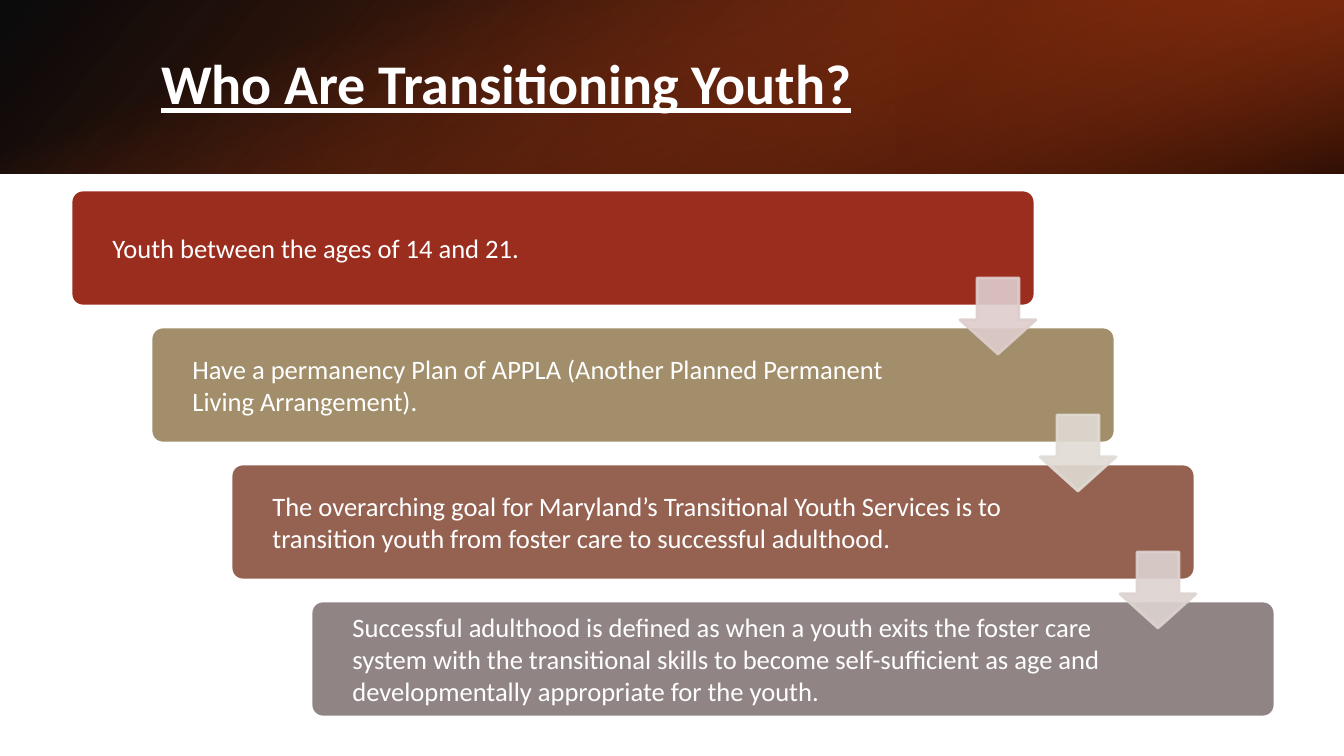
from lxml import etree
from pptx import Presentation
from pptx.dml.color import RGBColor
from pptx.enum.shapes import MSO_SHAPE as Preset
from pptx.enum.text import MSO_ANCHOR as Anchor, PP_ALIGN as Align
from pptx.oxml.ns import qn
from pptx.util import Pt

PX = 914400 / 100.8
PAGE_SIZE = 1344, 756

TITLE = "Who Are Transitioning Youth?"
TITLE_BOX = 151, 38, 1107, 97

BANNER = [
    {"box": (0, 0, 1344, 174), "rotation": 0, "flip": True, "angle": 140,
     "stops": [(0, "000000", 96), (100, "9E3611", 100)]},
    {"box": (896, 0, 448, 174), "rotation": 180, "flip": True, "angle": 320,
     "stops": [(19, "69240C", 68), (100, "D34817", 79)]},
    {"box": (585, -585, 174, 1344), "rotation": 90, "flip": False, "angle": 340,
     "stops": [(23, "D34817", 0), (99, "000000", 74)]},
]

STEPS = [
    ("Youth between the ages of 14 and 21.", "9B2D1F"),
    ("Have a permanency Plan of APPLA (Another Planned Permanent Living Arrangement).", "A28E6A"),
    ("The overarching goal for Maryland’s Transitional Youth Services is to transition "
     "youth from foster care to successful adulthood.", "956251"),
    ("Successful adulthood is defined as when a youth exits the foster care system with "
     "the transitional skills to become self-sufficient as age and developmentally "
     "appropriate for the youth.", "918485"),
]
ARROW_COLORS = ["DECDCD", "E0DBD4", "DDD3D0"]

STEP_X, STEP_Y = 80, 137
CARD = 71, 190, 964, 116
ARROW = 960, 278, 76, 76


def px(value):
    return round(value * PX)


def color(value):
    return RGBColor.from_string(value)


def stepped(box, index):
    left, top, width, height = box
    return left + STEP_X * index, top + STEP_Y * index, width, height


def add_preset(page, preset, box, adjustments=()):
    shape = page.shapes.add_shape(preset, *map(px, box))
    shape.shadow.inherit = False
    for index, value in enumerate(adjustments):
        shape.adjustments[index] = value
    return shape


def paint(shape, fill, line):
    shape.fill.solid()
    shape.fill.fore_color.rgb = color(fill)
    shape.line.color.rgb = color(line)
    shape.line.width = Pt(2)


def set_alpha(color_element, percent):
    etree.SubElement(color_element, qn("a:alpha"), val=str(percent * 1000))


def write(frame, text, size, bold=False, underline=False, spacing=1.0, margins=None):
    frame.word_wrap = True
    frame.vertical_anchor = Anchor.MIDDLE
    if margins:
        (frame.margin_left, frame.margin_top,
         frame.margin_right, frame.margin_bottom) = map(px, margins)
    para = frame.paragraphs[0]
    para.alignment = Align.LEFT
    para.line_spacing = spacing
    span = para.add_run()
    span.text = text
    span.font.name = "Calibri"
    span.font.size = Pt(size)
    span.font.bold = bold
    span.font.underline = underline
    span.font.color.rgb = color("FFFFFF")


def add_gradient(page, box, rotation, flip, angle, stops):
    shape = add_preset(page, Preset.RECTANGLE, box)
    shape.line.fill.background()
    shape.rotation = rotation
    properties = shape.element.spPr
    if flip:
        properties.find(qn("a:xfrm")).set("flipH", "1")
    gradient = etree.Element(qn("a:gradFill"), rotWithShape="1")
    stop_list = etree.SubElement(gradient, qn("a:gsLst"))
    for position, value, alpha in stops:
        stop = etree.SubElement(stop_list, qn("a:gs"), pos=str(position * 1000))
        set_alpha(etree.SubElement(stop, qn("a:srgbClr"), val=value), alpha)
    etree.SubElement(gradient, qn("a:lin"), ang=str(angle * 60000), scaled="0")
    properties.find(qn("a:prstGeom")).addnext(gradient)


def add_title(page):
    title = page.shapes.title
    title.left, title.top, title.width, title.height = map(px, TITLE_BOX)
    write(title.text_frame, TITLE, 40, bold=True, underline=True, spacing=0.9)
    page.shapes.element.append(title.element)


def add_card(page, index, text, fill):
    card = add_preset(page, Preset.ROUNDED_RECTANGLE, stepped(CARD, index), [0.1])
    paint(card, fill, "FFFFFF")
    write(card.text_frame, text, 19, margins=(38, 8, 166, 8))


def add_arrow(page, index, fill):
    arrow = add_preset(page, Preset.DOWN_ARROW, stepped(ARROW, index), [0.55, 0.45])
    paint(arrow, fill, fill)
    for color_element in arrow.element.spPr.iter(qn("a:srgbClr")):
        set_alpha(color_element, 90)


def main():
    deck = Presentation()
    deck.slide_width, deck.slide_height = map(px, PAGE_SIZE)
    page = deck.slides.add_slide(deck.slide_layouts[5])
    for layer in BANNER:
        add_gradient(page, **layer)
    add_title(page)
    for index, (text, fill) in enumerate(STEPS):
        add_card(page, index, text, fill)
    for index, fill in enumerate(ARROW_COLORS):
        add_arrow(page, index, fill)
    deck.save("out.pptx")


if __name__ == "__main__":
    main()
